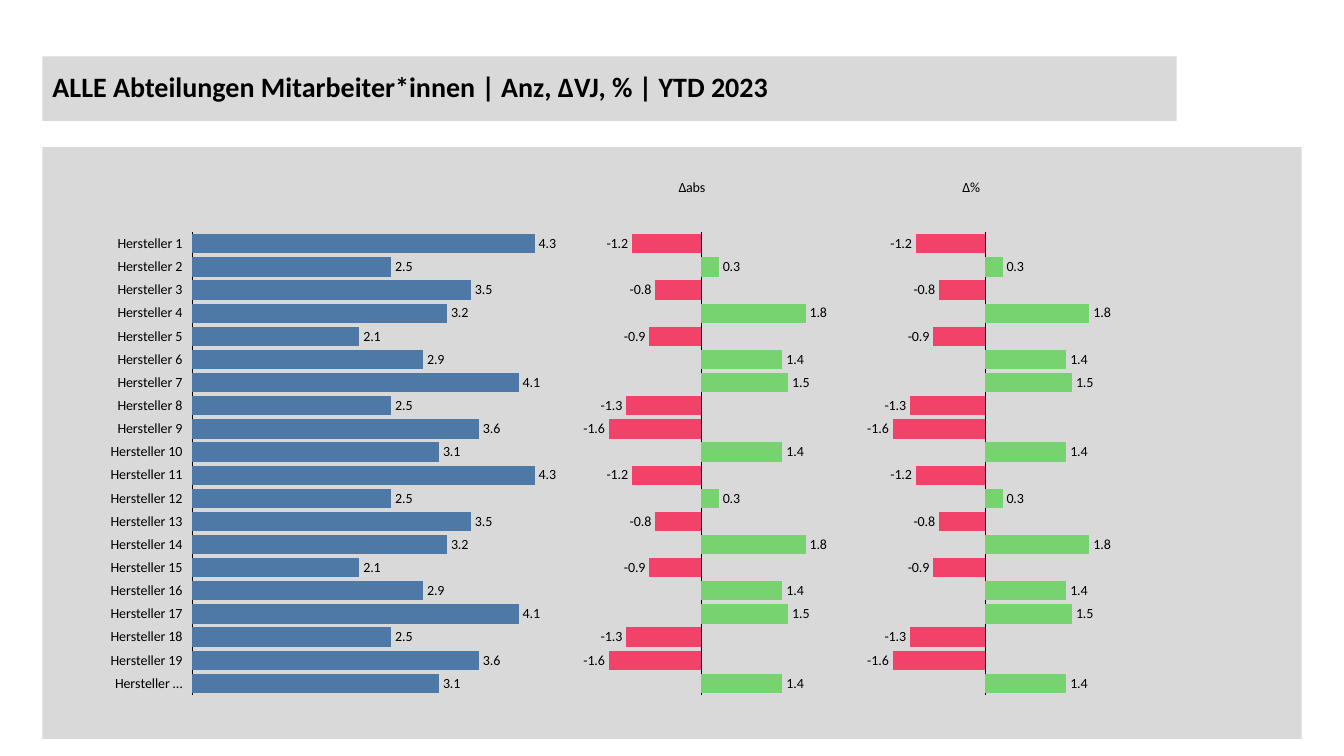
from dataclasses import dataclass

from lxml import etree
from pptx import Presentation
from pptx import util as u
from pptx.chart.data import CategoryChartData
from pptx.dml.color import RGBColor
from pptx.enum import chart as ch, shapes, text
from pptx.oxml.ns import qn

# Content
TITLE = "ALLE Abteilungen Mitarbeiter*innen | Anz, ΔVJ, % | YTD 2023"
MAKERS = [f"Hersteller {n}" for n in range(1, 20)] + ["Hersteller …"]
COUNTS = [4.3, 2.5, 3.5, 3.2, 2.1, 2.9, 4.1, 2.5, 3.6, 3.1] * 2
CHANGES = [-1.2, 0.3, -0.8, 1.8, -0.9, 1.4, 1.5, -1.3, -1.6, 1.4] * 2


@dataclass(frozen=True)
class Theme:
    font: str = "Calibri"
    title_size: int = 20
    chart_size: int = 10
    text: RGBColor = RGBColor(0, 0, 0)
    panel: RGBColor = RGBColor.from_string("D9D9D9")
    count: RGBColor = RGBColor.from_string("4E79A7")
    rise: RGBColor = RGBColor.from_string("77D36F")
    fall: RGBColor = RGBColor.from_string("F24269")


T = Theme()

# Geometry in inches; plot areas as fractions of their chart
LEFT = 0.42
CHART_TOP, CHART_H = 1.51, 5.76
COUNT_LEFT, COUNT_W = 0.57, 5.71
DELTA_LEFT, DELTA_W = 5.55, 2.815
PLOT_Y, PLOT_H = 0.138, 0.797
COUNT_PLOT = (0.234, PLOT_Y, 0.692, PLOT_H)
DELTA_PLOT = (0.092, PLOT_Y, 0.816, PLOT_H)
HEADING_AT = (0.41, 0.04)

# Columns from back to front: heading, left, width, values, colour, limits, plot
COLUMNS = [
    ("∆%", DELTA_LEFT + DELTA_W, DELTA_W, CHANGES, T.rise, (-2, 2), DELTA_PLOT),
    (None, COUNT_LEFT, COUNT_W, COUNTS, T.count, (0, 5), COUNT_PLOT),
    ("∆abs", DELTA_LEFT, DELTA_W, CHANGES, T.rise, (-2, 2), DELTA_PLOT),
]


def style(font, size, bold=False):
    font.name, font.size, font.bold = T.font, u.Pt(size), bold
    font.color.rgb = T.text


def fill(target, color):
    target.fill.solid()
    target.fill.fore_color.rgb = color


def set_layout(parent, index, values, inner=False):
    """Give a plot area or chart title a fixed place."""
    layout = parent.find(qn("c:layout"))
    if layout is None:
        layout = etree.Element(qn("c:layout"))
        parent.insert(index, layout)
    manual = etree.SubElement(layout, qn("c:manualLayout"))
    items = [("layoutTarget", "inner")] if inner else []
    items += [("xMode", "edge"), ("yMode", "edge"), *zip("xywh", values)]
    for tag, value in items:
        etree.SubElement(manual, qn(f"c:{tag}")).set("val", str(value))


def add_bars(s, heading, left, width, values, color, limits, plot_at):
    data = CategoryChartData()
    data.categories = MAKERS
    data.add_series("Series 1", values)
    chart = s.shapes.add_chart(
        ch.XL_CHART_TYPE.BAR_CLUSTERED, u.Inches(left), u.Inches(CHART_TOP),
        u.Inches(width), u.Inches(CHART_H), data).chart
    style(chart.font, T.chart_size)
    chart.has_legend = False

    # Heading and plot area
    chart.has_title = heading is not None
    if heading:
        p = chart.chart_title.text_frame.paragraphs[0]
        p.text = heading
        style(p.font, T.chart_size)
        set_layout(chart.chart_title._element, 1, HEADING_AT)
    set_layout(chart._chartSpace.chart.plotArea, 0, plot_at, inner=True)

    # Axes
    cat, val = chart.category_axis, chart.value_axis
    cat.reverse_order = True
    cat.has_major_gridlines = False
    cat.major_tick_mark = cat.minor_tick_mark = ch.XL_TICK_MARK.NONE
    cat.tick_label_position = (ch.XL_TICK_LABEL_POSITION.NONE if heading
                               else ch.XL_TICK_LABEL_POSITION.LOW)
    style(cat.tick_labels.font, T.chart_size)
    cat.format.line.color.rgb = T.text
    cat.format.line.width = u.Pt(0.75)
    val.minimum_scale, val.maximum_scale = limits
    val.has_major_gridlines = False
    val.visible = False

    # Bars and value labels
    plot = chart.plots[0]
    plot.gap_width = 20
    plot.vary_by_categories = False
    series = plot.series[0]
    series.invert_if_negative = False
    fill(series.format, color)
    for i, value in enumerate(values):
        if value < 0:
            fill(series.points[i].format, T.fall)
    labels = series.data_labels
    labels.show_value = True
    labels.number_format = "#,##0.0"
    labels.number_format_is_linked = False
    labels.position = ch.XL_LABEL_POSITION.OUTSIDE_END
    style(labels.font, T.chart_size)


def main():
    prs = Presentation()
    prs.slide_width, prs.slide_height = u.Inches(13.33), u.Inches(7.5)
    s = prs.slides.add_slide(prs.slide_layouts[5])

    # Title bar
    title = s.shapes.title
    title.left, title.top = u.Inches(LEFT), u.Inches(0.56)
    title.width, title.height = u.Inches(11.25), u.Inches(0.64)
    fill(title, T.panel)
    tf = title.text_frame
    tf.text = TITLE
    tf.auto_size = text.MSO_AUTO_SIZE.NONE
    tf.vertical_anchor = text.MSO_ANCHOR.MIDDLE
    p = tf.paragraphs[0]
    p.alignment = text.PP_ALIGN.LEFT
    p.line_spacing = 0.9
    style(p.font, T.title_size, bold=True)

    # Panel behind the charts
    panel = s.shapes.add_shape(
        shapes.MSO_SHAPE.RECTANGLE, u.Inches(LEFT), u.Inches(1.46),
        u.Inches(12.49), u.Inches(5.87))
    panel.shadow.inherit = False
    fill(panel, T.panel)
    panel.line.fill.background()

    # Charts
    for column in COLUMNS:
        add_bars(s, *column)

    prs.save("out.pptx")


if __name__ == "__main__":
    main()
